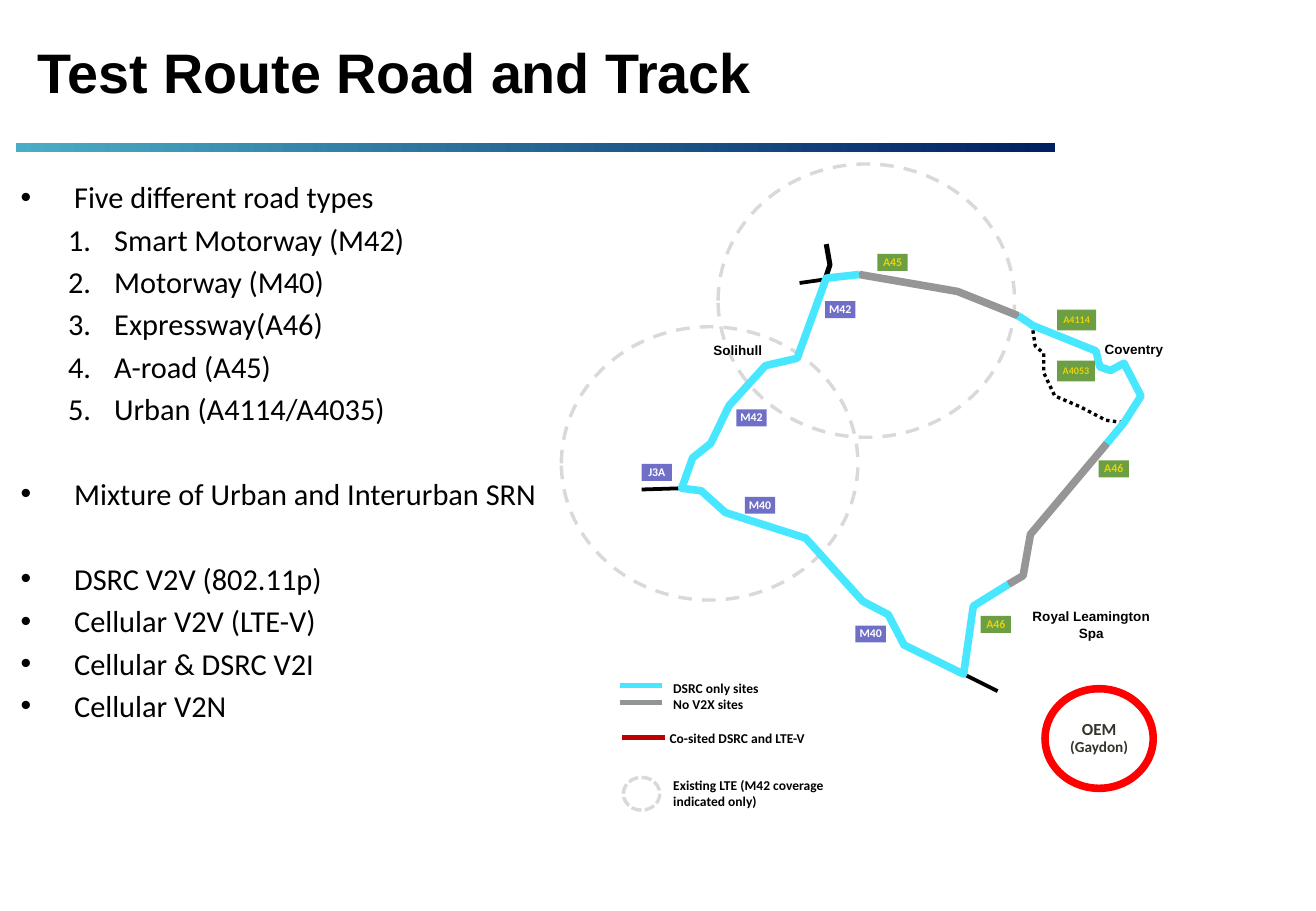
"""Builds the slide that shows the test route on road and track."""
from typing import NamedTuple, Optional

from lxml import etree
from pptx import Presentation
from pptx import util as u
from pptx.dml.color import RGBColor
from pptx.enum import dml, shapes, text
from pptx.oxml.ns import qn

COLOURS = {
    "black": "000000", "white": "FFFFFF", "teal": "4BACC6", "navy": "002060",
    "coverage": "D9D9D9", "dsrc": "46E7FF", "no_v2x": "969696", "legend_grey": "919596",
    "cosited": "C00000", "motorway": "6F6FC8", "a_road": "6C9F43", "yellow": "E7D20B",
    "site": "FF0000", "site_text": "34342B",
}
CELL = u.Inches(0.1)
COLUMNS, ROWS = 108.3, 75
Point = tuple[float, float]


class Box(NamedTuple):
    col: float
    row: float
    cols: float
    rows: float


class Run(NamedTuple):
    words: str
    size: float
    font: str = "Calibri"
    colour: str = "black"
    bold: bool = True


class Tag(NamedTuple):
    road: str
    col: float
    row: float
    kind: str = "a_road"
    cols: float = 2.5
    rows: float = 1.4
    size: float = 7


class Label(NamedTuple):
    run: Run
    box: Box
    align: text.PP_ALIGN = text.PP_ALIGN.LEFT


class Ring(NamedTuple):
    box: Box
    colour: str = "coverage"
    width: float = 2
    dash: Optional[dml.MSO_LINE] = dml.MSO_LINE.DASH


class Road(NamedTuple):
    points: list[Point]
    colour: str = "black"
    width: float = 2.25
    dash: Optional[dml.MSO_LINE] = None
    closed: bool = False


class Item(NamedTuple):
    words: str
    numbered: bool = False
    new_block: bool = False


LOOP = [
    (56.1, 40.2), (57.7, 40.4), (59.7, 42.2), (66.3, 44.3), (71, 49.5), (73.1, 50.6),
    (74.4, 53.1), (79.3, 55.5), (80.1, 49.9), (83, 48.1), (84.2, 47.4), (84.8, 44),
    (91.1, 36.5), (92.5, 34.8), (93.9, 32.6), (92.5, 29.9), (91.4, 30.5), (90.5, 30.2),
    (90.2, 28.9), (85, 26.8), (83.8, 26), (78.8, 24), (70.7, 22.6), (68, 22.9),
    (65.6, 29.5), (63, 30.1), (60, 33.4), (58.5, 36.5), (57, 37.7),
]
BYPASS = [(85, 27.2), (85.2, 28.5), (85.9, 29.1), (85.9, 30.7), (86.8, 32.6),
          (88.9, 33.5), (91, 34.6), (92.5, 34.8)]
ROADS = [
    Road(LOOP, closed=True),
    Road(BYPASS, width=2, dash=dml.MSO_LINE.ROUND_DOT),
    Road([(67.9, 23), (68.3, 21.8), (68, 20.1)], width=3),
]
SPURS = [
    Road([(67.9, 23), (65.8, 23.3)]),
    Road([(56.1, 40.2), (52.8, 40.3)]),
    Road([(79.3, 55.5), (82.1, 56.9)]),
]
COVERED_ROADS = [
    Road(LOOP[9:13], "no_v2x", 4.5),
    Road(LOOP[20:23], "no_v2x", 4.5),
    Road(LOOP[22:] + LOOP[:10], "dsrc", 4.5),
    Road(LOOP[12:21], "dsrc", 4.5),
]
LEGEND_LINES = [
    Road([(51, 56.4), (54.5, 56.4)], "dsrc", 3),
    Road([(51, 57.8), (54.5, 57.8)], "legend_grey", 3),
    Road([(51.2, 60.7), (54.7, 60.7)], "cosited", 3),
]
COVERAGE = [Ring(Box(59.1, 13.5, 24.4, 22.5)), Ring(Box(46.2, 26.9, 24.4, 22.5))]
COVERAGE_KEY = Ring(Box(51.3, 64, 3, 2.7), dash=dml.MSO_LINE.SQUARE_DOT)
TEST_SITE = Ring(Box(86, 56.7, 8.9, 8.2), "site", 4.5, None)
TAGS = [
    Tag("A45", 72.2, 20.9), Tag("A46", 90.4, 37.9), Tag("A46", 80.7, 50.7),
    Tag("A4114", 87, 25.5, cols=3.2, rows=1.7, size=6),
    Tag("A4053", 87, 29.7, cols=3.1, rows=1.7, size=6),
    Tag("M40", 61.3, 40.9, "motorway"), Tag("M40", 70.4, 51.5, "motorway"),
    Tag("M42", 60.6, 33.7, "motorway"), Tag("M42", 67.9, 24.8, "motorway"),
    Tag("J3A", 52.8, 38.2, "motorway"),
]
LABELS = [
    Label(Run("Solihull", 8, "Arial"), Box(58.7, 28.2, 5.5, 1.3)),
    Label(Run("Coventry", 8, "Arial"), Box(90.9, 28.1, 5.5, 1.3)),
    Label(Run("Royal Leamington Spa", 8, "Arial"), Box(84.7, 50.1, 10.2, 2.7),
          align=text.PP_ALIGN.CENTER),
    Label(Run("DSRC only sites", 8), Box(55.4, 56, 16.1, 1.3)),
    Label(Run("No V2X sites", 8), Box(55.4, 57.3, 16.1, 1.3)),
    Label(Run("Co-sited DSRC and LTE-V", 8), Box(55.1, 60.1, 16.1, 1.3)),
    Label(Run("Existing LTE (M42 coverage indicated only)", 8), Box(55.4, 64, 14.5, 2.7)),
]
ITEMS = [
    Item("Five different road types"),
    Item("Smart Motorway (M42)", True), Item("Motorway (M40)", True),
    Item("Expressway(A46)", True), Item("A-road (A45)", True),
    Item("Urban (A4114/A4035)", True),
    Item("Mixture of Urban and Interurban SRN", new_block=True),
    Item("DSRC V2V (802.11p)", new_block=True), Item("Cellular V2V (LTE-V)"),
    Item("Cellular & DSRC V2I"), Item("Cellular V2N"),
]


def grid(cells: float) -> int:
    """Turn grid cells into a length."""
    return round(cells * CELL)


def rgb(name: str) -> RGBColor:
    """Look up a colour."""
    return RGBColor.from_string(COLOURS[name])


def write(paragraph, *runs: Run) -> None:
    """Add runs to a paragraph."""
    for entry in runs:
        run = paragraph.add_run()
        run.text = entry.words
        run.font.size, run.font.name, run.font.bold = u.Pt(entry.size), entry.font, entry.bold
        run.font.color.rgb = rgb(entry.colour)


def set_frame(shape, across: float, down: float, anchor=text.MSO_ANCHOR.TOP):
    """Set margins, anchor and wrapping, and return the text frame."""
    frame = shape.text_frame
    frame.margin_left = frame.margin_right = grid(across)
    frame.margin_top = frame.margin_bottom = grid(down)
    frame.vertical_anchor, frame.word_wrap = anchor, True
    return frame


def add_preset(slide, kind: shapes.MSO_SHAPE, box: Box):
    """Add a shape without shadow, fill or line."""
    shape = slide.shapes.add_shape(kind, *map(grid, box))
    shape.shadow.inherit = False
    shape.fill.background()
    shape.line.fill.background()
    return shape


def style_line(line, part: Ring | Road) -> None:
    """Give a line its colour, width and dash."""
    line.color.rgb, line.width = rgb(part.colour), u.Pt(part.width)
    if part.dash:
        line.dash_style = part.dash


def add_ring(slide, ring: Ring):
    """Draw an outlined ellipse."""
    shape = add_preset(slide, shapes.MSO_SHAPE.OVAL, ring.box)
    style_line(shape.line, ring)
    return shape


def add_road(slide, road: Road) -> None:
    """Draw a bent road."""
    start, *rest = [(grid(x), grid(y)) for x, y in road.points]
    builder = slide.shapes.build_freeform(*start)
    builder.add_line_segments(rest, close=road.closed)
    shape = builder.convert_to_shape()
    shape.shadow.inherit = False
    shape.fill.background()
    style_line(shape.line, road)


def add_straight(slide, road: Road) -> None:
    """Draw a straight line."""
    ends = [grid(cells) for point in road.points for cells in point]
    line = slide.shapes.add_connector(shapes.MSO_CONNECTOR.STRAIGHT, *ends)
    style_line(line.line, road)
    etree.SubElement(line._element.spPr, qn("a:effectLst"))


def write_centred(shape, *runs: Run) -> None:
    """Write tight centred text inside a shape."""
    paragraph = set_frame(shape, 0.1, 0.1, text.MSO_ANCHOR.MIDDLE).paragraphs[0]
    paragraph.alignment, paragraph.line_spacing = text.PP_ALIGN.CENTER, 0.9
    write(paragraph, *runs)


def add_tag(slide, tag: Tag) -> None:
    """Draw a road number plate."""
    shape = add_preset(slide, shapes.MSO_SHAPE.RECTANGLE, Box(tag.col, tag.row, tag.cols, tag.rows))
    shape.fill.solid()
    shape.fill.fore_color.rgb = rgb(tag.kind)
    ink = "white" if tag.kind == "motorway" else "yellow"
    write_centred(shape, Run(tag.road, tag.size, colour=ink))


def add_label(slide, label: Label) -> None:
    """Write a map or legend label."""
    shape = slide.shapes.add_textbox(*map(grid, label.box))
    paragraph = set_frame(shape, 0, 0).paragraphs[0]
    paragraph.alignment = label.align
    write(paragraph, label.run)


def add_heading(slide) -> None:
    """Draw the title and the bar below it."""
    bar = add_preset(slide, shapes.MSO_SHAPE.RECTANGLE, Box(1.3, 11.8, 85.5, 0.7))
    bar.fill.gradient()
    bar.fill.gradient_angle = 0
    for stop, colour in zip(bar.fill.gradient_stops, ("teal", "navy")):
        stop.color.rgb = rgb(colour)
    title = slide.shapes.add_textbox(*map(grid, Box(1.9, 2.3, 97.5, 7.1)))
    frame = set_frame(title, 1.2, 0.6, text.MSO_ANCHOR.MIDDLE)
    write(frame.paragraphs[0], Run("Test Route Road and Track", 33, "Arial"))


def add_items(slide) -> None:
    """Write the bulleted and numbered list."""
    frame = set_frame(slide.shapes.add_textbox(*map(grid, Box(0.5, 14.1, 45.7, 45))), 1.2, 0.6)
    for index, item in enumerate(ITEMS):
        paragraph = frame.add_paragraph() if index else frame.paragraphs[0]
        paragraph.level = int(item.numbered)
        margin, indent = (7.7, -3.8) if item.numbered else (4.4, -4.4)
        properties = paragraph._p.get_or_add_pPr()
        properties.set("marL", str(grid(margin)))
        properties.set("indent", str(grid(indent)))
        if item.numbered:
            etree.SubElement(properties, qn("a:buAutoNum"), type="arabicPeriod")
        else:
            etree.SubElement(properties, qn("a:buFont"), typeface="Arial")
            etree.SubElement(properties, qn("a:buChar"), char="•")
        if index:
            paragraph.space_before = u.Pt(28.8 if item.new_block else 3.5)
        write(paragraph, Run(item.words, 18, bold=False))


def main() -> None:
    """Build and save the slide."""
    deck = Presentation()
    deck.slide_width, deck.slide_height = grid(COLUMNS), grid(ROWS)
    slide = deck.slides.add_slide(deck.slide_layouts[6])
    add_heading(slide)
    add_items(slide)
    for draw, parts in (
        (add_ring, COVERAGE), (add_road, ROADS), (add_straight, SPURS),
        (add_road, COVERED_ROADS), (add_tag, TAGS), (add_label, LABELS),
        (add_straight, LEGEND_LINES), (add_ring, [COVERAGE_KEY]),
    ):
        for part in parts:
            draw(slide, part)
    write_centred(add_ring(slide, TEST_SITE), Run("OEM ", 10, colour="site_text"),
                  Run("(Gaydon)", 9, colour="site_text"))
    deck.save("out.pptx")


if __name__ == "__main__":
    main()
